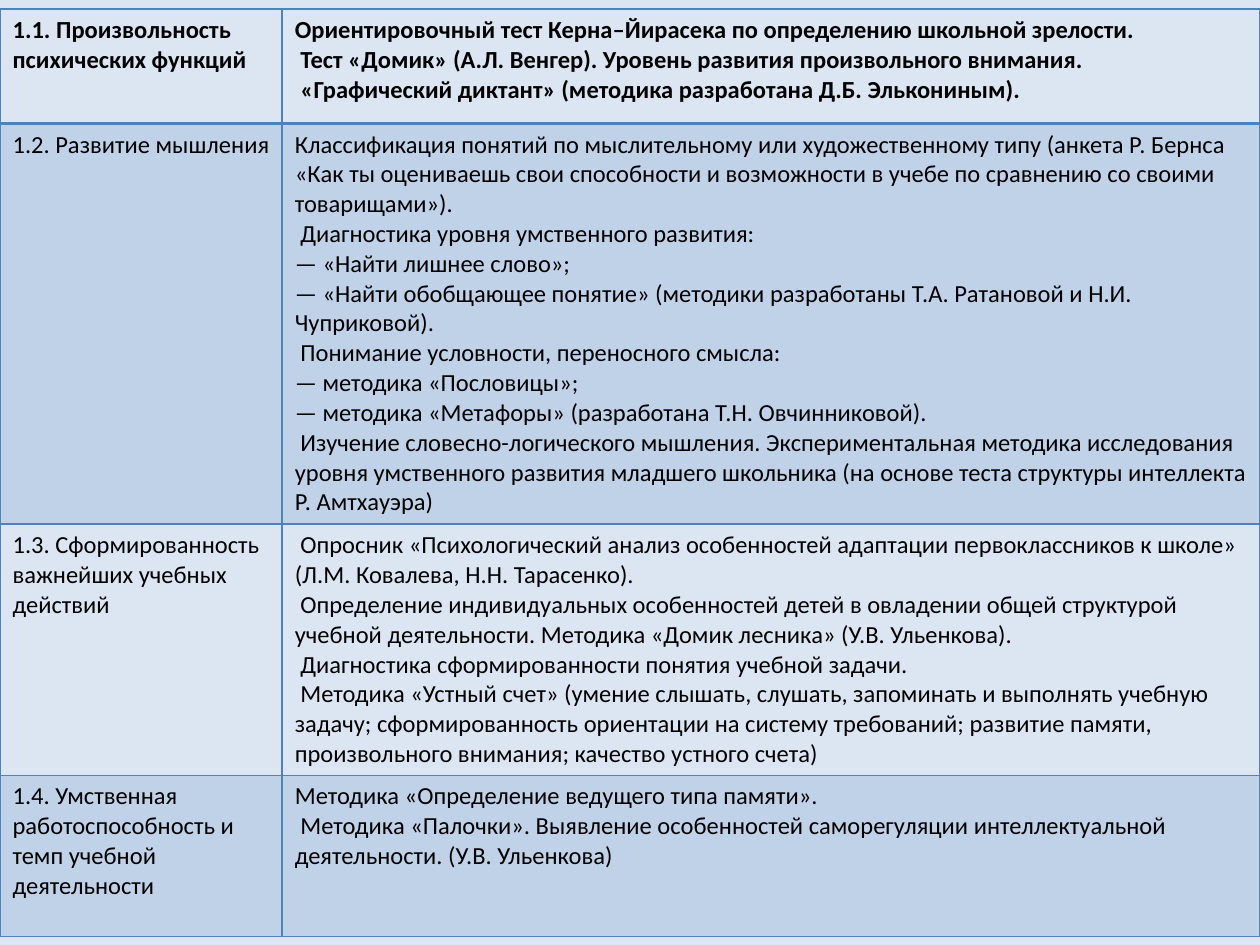
from lxml import etree
from pptx import Presentation
from pptx.dml.color import RGBColor
from pptx.oxml.ns import qn
from pptx.util import Inches, Pt

COLORS = {"bg": "DCE6F2", "band": "C0D2E7", "line": "4F81BD", "text": "000000"}
COL_WIDTHS = [2.24, 7.76]
ROW_HEIGHTS = [0.91, 3.18, 1.99, 1.28]

ROWS = [
    (["1.1. Произвольность психических функций"],
     ["Ориентировочный тест Керна–Йирасека по определению школьной зрелости.",
      " Тест «Домик» (А.Л. Венгер). Уровень развития произвольного внимания.",
      " «Графический диктант» (методика разработана Д.Б. Элькониным)."]),
    (["1.2. Развитие мышления"],
     ["Классификация понятий по мыслительному или художественному типу "
      "(анкета Р. Бернса «Как ты оцениваешь свои способности и возможности "
      "в учебе по сравнению со своими товарищами»).",
      " Диагностика уровня умственного развития:",
      "— «Найти лишнее слово»;",
      "— «Найти обобщающее понятие» (методики разработаны Т.А. Ратановой и "
      "Н.И. Чуприковой).",
      " Понимание условности, переносного смысла:",
      "— методика «Пословицы»;",
      "— методика «Метафоры» (разработана Т.Н. Овчинниковой).",
      " Изучение словесно-логического мышления. Экспериментальная методика "
      "исследования уровня умственного развития младшего школьника (на основе "
      "теста структуры интеллекта Р. Амтхауэра)"]),
    (["1.3. Сформированность важнейших учебных действий"],
     [" Опросник «Психологический анализ особенностей адаптации "
      "первоклассников к школе» (Л.М. Ковалева, Н.Н. Тарасенко).",
      " Определение индивидуальных особенностей детей в овладении общей "
      "структурой учебной деятельности. Методика «Домик лесника» "
      "(У.В. Ульенкова).",
      " Диагностика сформированности понятия учебной задачи.",
      " Методика «Устный счет» (умение слышать, слушать, запоминать и "
      "выполнять учебную задачу; сформированность ориентации на систему "
      "требований; развитие памяти, произвольного внимания; качество устного "
      "счета)"]),
    (["1.4. Умственная работоспособность и темп учебной деятельности"],
     ["Методика «Определение ведущего типа памяти».",
      " Методика «Палочки». Выявление особенностей саморегуляции "
      "интеллектуальной деятельности. (У.В. Ульенкова)"]),
]


class SlideBuilder:
    """Holds the text style and the current slide."""

    font = "Calibri"
    size = Pt(14)

    def __init__(self, s):
        self.s = s

    def background(self, color):
        fill = self.s.background.fill
        fill.solid()
        fill.fore_color.rgb = RGBColor.from_string(COLORS[color])

    def table(self, rows, left, top, widths, heights):
        """Add a table with a bold header and every second row shaded."""
        table = self.s.shapes.add_table(
            len(rows), len(widths), Inches(left), Inches(top),
            Inches(sum(widths)), Inches(sum(heights))).table
        table.first_row = table.horz_banding = False
        for col, width in zip(table.columns, widths):
            col.width = Inches(width)
        for i, (row, height) in enumerate(zip(rows, heights)):
            table.rows[i].height = Inches(height)
            for j, lines in enumerate(row):
                cell = table.cell(i, j)
                self.cell_text(cell, lines, bold=i == 0)
                if i % 2:
                    cell.fill.solid()
                    cell.fill.fore_color.rgb = RGBColor.from_string(COLORS["band"])
                else:
                    cell.fill.background()
                self.cell_borders(cell, top=2 if i == 1 else 1,
                                  bottom=2 if i == 0 else 1)

    def cell_text(self, cell, lines, bold):
        tf = cell.text_frame
        tf.text = "\n".join(lines)
        for p in tf.paragraphs:
            p.font.name = self.font
            p.font.size = self.size
            p.font.bold = bold
            p.font.color.rgb = RGBColor.from_string(COLORS["text"])

    def cell_borders(self, cell, top, bottom):
        """Draw all four borders; the lines must precede the fill in tcPr."""
        tc_pr = cell._tc.get_or_add_tcPr()
        sides = {"a:lnL": 1, "a:lnR": 1, "a:lnT": top, "a:lnB": bottom}
        for i, (tag, width) in enumerate(sides.items()):
            ln = etree.Element(qn(tag), w=str(Pt(width)))
            fill = etree.SubElement(ln, qn("a:solidFill"))
            etree.SubElement(fill, qn("a:srgbClr"), val=COLORS["line"])
            tc_pr.insert(i, ln)


def main():
    prs = Presentation()
    prs.slide_width, prs.slide_height = Inches(10), Inches(7.5)
    builder = SlideBuilder(prs.slides.add_slide(prs.slide_layouts[6]))
    builder.background("bg")
    builder.table(ROWS, 0, 0.07, COL_WIDTHS, ROW_HEIGHTS)
    prs.save("out.pptx")


if __name__ == "__main__":
    main()
